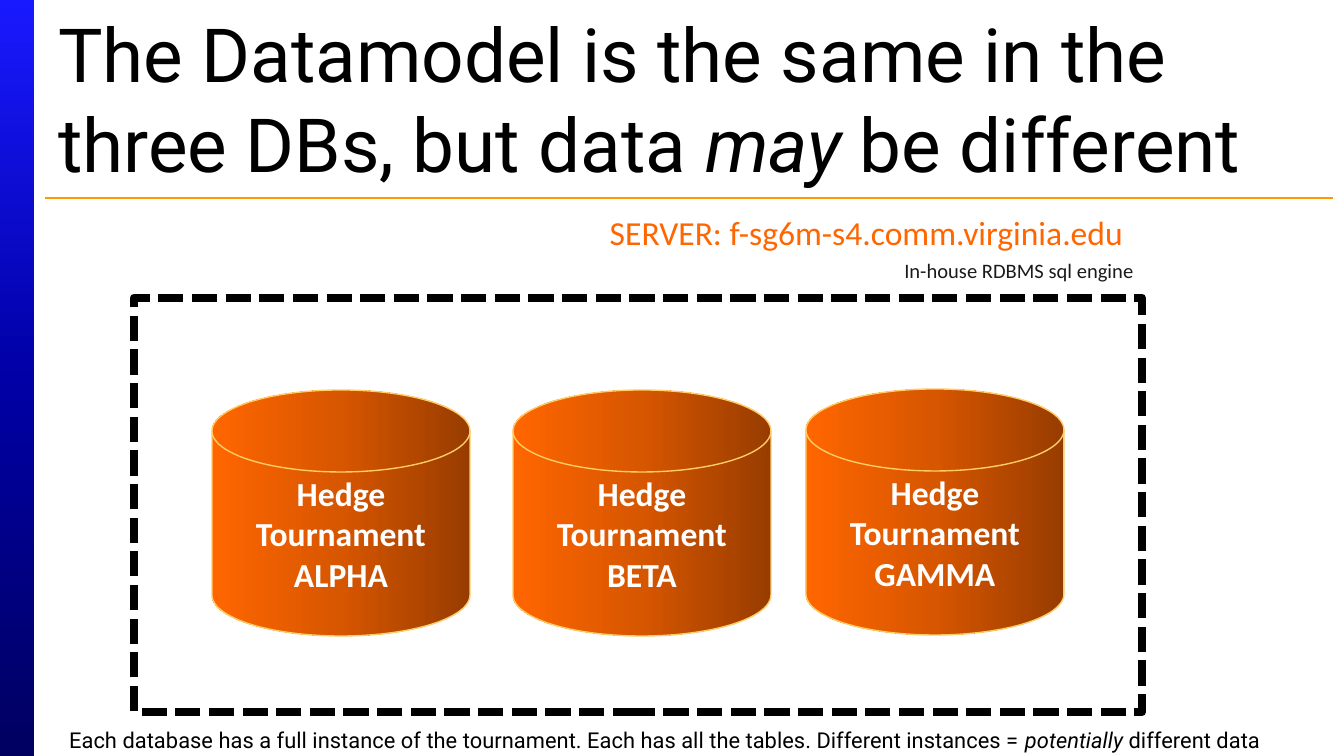
"""Builds the slide on three tournament databases that share one data model."""
from copy import deepcopy

from pptx import Presentation
from pptx import util as u
from pptx.dml.color import RGBColor
from pptx.enum import dml, shapes, text
from pptx.oxml import parse_xml
from pptx.oxml.ns import nsdecls, qn

PX = 914400 / 134.4
BLACK = RGBColor(0x00, 0x00, 0x00)
WHITE = RGBColor(0xFF, 0xFF, 0xFF)
CHARCOAL = RGBColor(0x1A, 0x1A, 0x1A)
ORANGE = RGBColor(0xFF, 0x66, 0x00)
MID_ORANGE = RGBColor(0xD7, 0x56, 0x00)
BROWN = RGBColor(0x97, 0x3C, 0x00)
GOLD = RGBColor(0xFF, 0xCC, 0x66)
AMBER = RGBColor(0xFF, 0x99, 0x00)
BRIGHT_BLUE = RGBColor(0x19, 0x19, 0xFF)
BLUE = RGBColor(0x00, 0x00, 0xA5)
NAVY = RGBColor(0x00, 0x00, 0x60)


def place(*lengths):
    return [u.Emu(round(length * PX)) for length in lengths]


def shade(shape, colors, angle):
    shape.fill.gradient()
    shape.fill.gradient_angle = angle
    stop_list = shape._element.spPr.find(".//" + qn("a:gsLst"))
    stop_list.append(deepcopy(stop_list[0]))
    for stop, color, position in zip(shape.fill.gradient_stops, colors, (0, 0.5, 1)):
        stop.color.rgb = color
        stop.position = position


deck = Presentation()
deck.slide_width, deck.slide_height = place(1344, 756)
page = deck.slides.add_slide(deck.slide_layouts[6])

side_bar = page.shapes.add_shape(shapes.MSO_SHAPE.RECTANGLE, *place(0, 0, 34, 756))
side_bar.shadow.inherit = False
side_bar.line.fill.background()
shade(side_bar, (BRIGHT_BLUE, BLUE, NAVY), 270)

rule = page.shapes.add_connector(shapes.MSO_CONNECTOR.STRAIGHT, *place(45, 198, 1333, 198))
rule.line.color.rgb = AMBER
rule.line.width = u.Pt(0.75)
rule._element.spPr.append(parse_xml(f"<a:effectLst {nsdecls('a')}/>"))

sentences = (
    ((45, 8, 1287, 179), 40, text.MSO_ANCHOR.MIDDLE,
     ("The Datamodel is the same in the three DBs, but data ", "may", " be different")),
    ((56, 720, 1288, 36), 11.7, text.MSO_ANCHOR.TOP,
     ("Each database has a full instance of the tournament. Each has all the tables. "
      "Different instances = ", "potentially ", "different data")),
)
for area, size, anchor, parts in sentences:
    box = page.shapes.add_textbox(*place(*area))
    box.text_frame.word_wrap = True
    box.text_frame.vertical_anchor = anchor
    para = box.text_frame.paragraphs[0]
    para.font.name = "Roboto"
    para.font.size = u.Pt(size)
    para.font.color.rgb = BLACK
    for part in parts:
        span = para.add_run()
        span.text = part
        if part == parts[1]:
            span.font.italic = True

for name, left, top in (("ALPHA", 212, 390), ("BETA", 513, 390), ("GAMMA", 806, 389)):
    database = page.shapes.add_shape(
        shapes.MSO_SHAPE.FLOWCHART_MAGNETIC_DISK, *place(left, top, 258, 246))
    database.shadow.inherit = False
    shade(database, (BROWN, MID_ORANGE, ORANGE), 180)
    database.line.color.rgb = GOLD
    database.line.width = u.Pt(0.75)
    database.text_frame.vertical_anchor = text.MSO_ANCHOR.MIDDLE
    para = database.text_frame.paragraphs[0]
    para.text = f"Hedge\vTournament\v{name}"
    para.alignment = text.PP_ALIGN.CENTER
    para.font.name = "Calibri"
    para.font.size = u.Pt(18)
    para.font.bold = True
    para.font.color.rgb = WHITE

frame = page.shapes.add_shape(shapes.MSO_SHAPE.RECTANGLE, *place(134, 298, 1008, 414))
frame.shadow.inherit = False
frame.fill.background()
frame.line.color.rgb = BLACK
frame.line.width = u.Pt(4.5)
frame.line.dash_style = dml.MSO_LINE.SQUARE_DOT

labels = (
    ((607, 212, 519, 40), "SERVER: f-sg6m-s4.comm.virginia.edu", 18, ORANGE),
    ((894, 257, 250, 26), "In-house RDBMS sql engine", 11, CHARCOAL),
)
for area, wording, size, color in labels:
    box = page.shapes.add_textbox(*place(*area))
    label = box.text_frame
    label.margin_left = label.margin_right = label.margin_top = label.margin_bottom = 0
    label.word_wrap = False
    label.vertical_anchor = text.MSO_ANCHOR.MIDDLE
    para = label.paragraphs[0]
    para.text = wording
    para.alignment = text.PP_ALIGN.CENTER
    para.font.name = "Calibri"
    para.font.size = u.Pt(size)
    para.font.color.rgb = color

deck.save("out.pptx")
